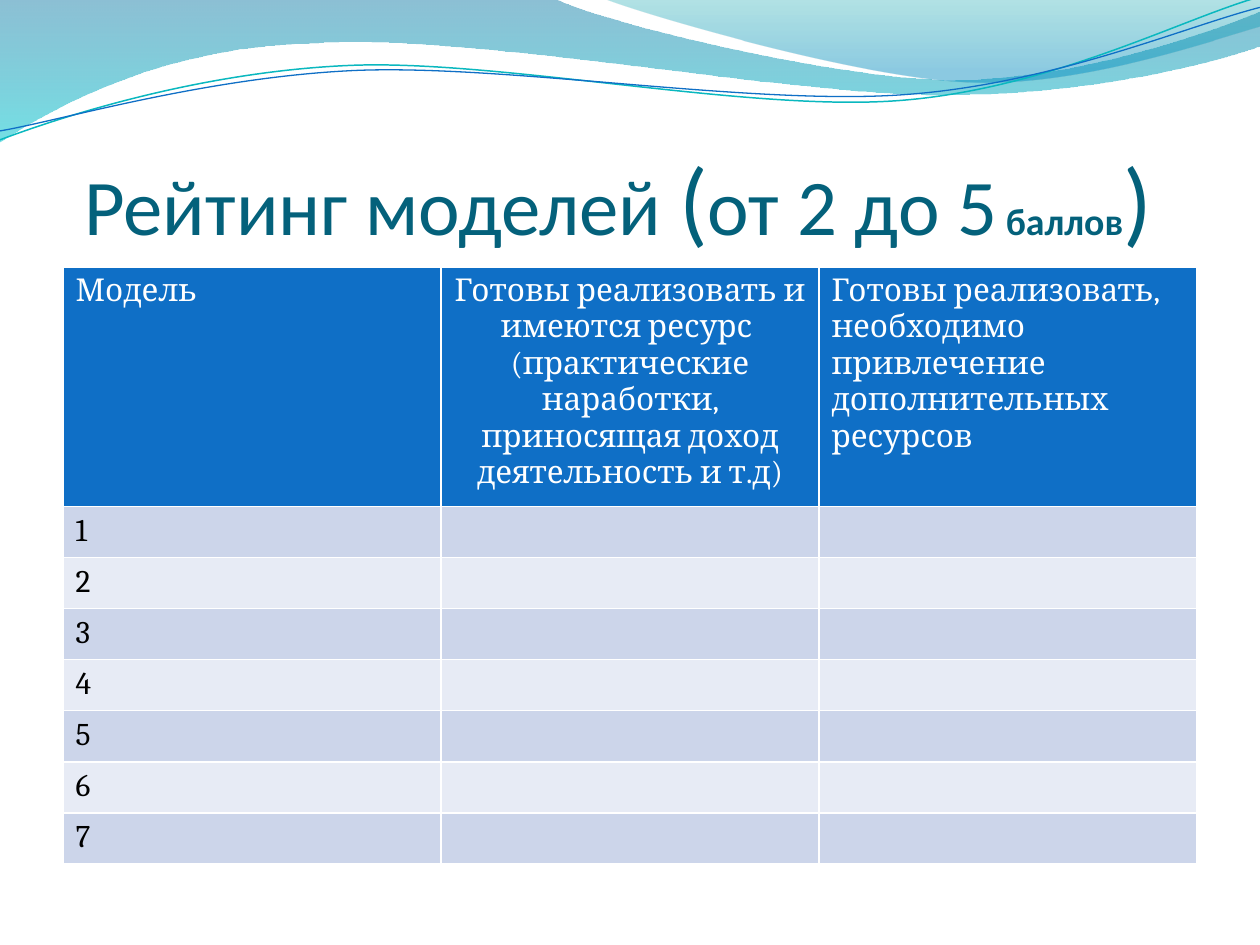
from lxml import etree
from pptx import Presentation
from pptx.dml.color import RGBColor
from pptx.enum.text import MSO_ANCHOR, PP_ALIGN
from pptx.oxml.ns import qn
from pptx.util import Cm, Pt

COLORS = {
    "title": "04617B", "head": "0F6FC6", "odd": "CCD5EA", "even": "E7EBF5",
    "white": "FFFFFF", "black": "000000", "teal": "0AB8BF",
    "sea": "0074A1", "aqua": "00C6CF", "green": "00A1A9", "sky": "008BBF",
}
# Outlines in cm: two numbers are a corner, six are a Bezier curve.
BACK_WAVE = [
    (0, 0), (11.18, -0.03),
    (12.09, 0.43, 16.87, 1.6, 19.25, 1.6),
    (21.67, 1.6, 24.33, 0.66, 25.4, 0.23), (25.43, 0.91),
    (24.97, 1.12, 22.1, 1.93, 18.95, 1.91),
    (15.8, 1.91, 9.7, 0.71, 6.53, 0.86),
    (3.28, 0.91, 1.17, 2.11, -0.03, 2.87),
]
FRONT_WAVE = [
    (12.17, -0.03),
    (12.93, 0.28, 17.32, 1.57, 19.53, 1.65),
    (21.74, 1.75, 24.41, 0.81, 25.4, 0.53), (25.4, 0),
]
TEAL_LINE = [
    (0, 2.82),
    (1.22, 2.36, 4.01, 1.45, 7.04, 1.32),
    (10.03, 1.19, 15.06, 2.26, 18.11, 2.03),
    (21.16, 1.8, 23.83, 0.38, 25.35, -0.05),
]
BLUE_LINE = [
    (0, 2.64),
    (1.19, 2.44, 4.17, 1.55, 7.19, 1.42),
    (10.24, 1.3, 15.16, 2.13, 18.21, 1.91),
    (21.23, 1.7, 23.9, 0.53, 25.4, 0.15),
]
TITLE = [("Рейтинг моделей ", 45, False), ("(", 54, False), ("от 2 до 5", 45, False),
         (" ", 21.6, False), ("баллов", 21.6, True), (")", 54, False)]
HEADERS = [
    ("Модель", PP_ALIGN.LEFT),
    ("Готовы реализовать и имеются ресурс  (практические наработки, "
     "приносящая доход деятельность и т.д)", PP_ALIGN.CENTER),
    ("Готовы реализовать, необходимо привлечение дополнительных ресурсов", PP_ALIGN.LEFT),
]
MODELS = 7


def rgb(name):
    return RGBColor.from_string(COLORS[name])


class Deck:
    """Style and current slide."""
    title_font = "Calibri"
    body_font = "Cambria"
    body_size = 18

    def __init__(self, prs):
        self.slide = prs.slides.add_slide(prs.slide_layouts[6])

    def style_run(self, r, font, size, color, bold=False):
        r.font.name, r.font.size, r.font.bold = font, Pt(size), bold
        r.font.color.rgb = rgb(color)

    def outline(self, outline, closed):
        """Draw all points as corners, then join each curve's three into one Bezier."""
        points = [(Cm(x), Cm(y)) for seg in outline for x, y in zip(seg[::2], seg[1::2])]
        builder = self.slide.shapes.build_freeform(*points[0])
        builder.add_line_segments(points[1:], close=closed)
        sp = builder.convert_to_shape()
        sp.shadow.inherit = False
        corners = iter(list(sp._element.iter(qn("a:lnTo"))))
        for seg in outline[1:]:
            first = next(corners)
            if len(seg) == 6:
                first.tag = qn("a:cubicBezTo")
                for _ in range(2):
                    corner = next(corners)
                    first.append(corner[0])
                    corner.getparent().remove(corner)
        return sp

    def wave(self, outline, stops):
        """Closed shape with a downward fade; stops are (position, colour, opacity %)."""
        sp = self.outline(outline, True)
        sp.line.fill.background()
        sp.fill.gradient()
        sp.fill.gradient_angle = 270
        for stop, (position, color, _) in zip(sp.fill.gradient_stops, stops):
            stop.position = position
            stop.color.rgb = rgb(color)
        for clr, (_, _, opacity) in zip(sp._element.spPr.iter(qn("a:srgbClr")), stops):
            etree.SubElement(clr, qn("a:alpha"), val=str(opacity * 1000))

    def curve(self, outline, color, width):
        sp = self.outline(outline, False)
        sp.fill.background()
        sp.line.color.rgb = rgb(color)
        sp.line.width = Pt(width)

    def title(self, runs, left, top, width, height):
        tf = self.slide.shapes.add_textbox(Cm(left), Cm(top), Cm(width), Cm(height)).text_frame
        tf.word_wrap = True
        tf.vertical_anchor = MSO_ANCHOR.BOTTOM
        tf.margin_left = tf.margin_right = tf.margin_bottom = 0
        for text, size, bold in runs:
            r = tf.paragraphs[0].add_run()
            r.text = text
            self.style_run(r, self.title_font, size, "title", bold)

    def cell(self, cell, text, fill, color, align=PP_ALIGN.LEFT):
        cell.fill.solid()
        cell.fill.fore_color.rgb = rgb(fill)
        if text:
            p = cell.text_frame.paragraphs[0]
            p.text = text
            p.alignment = align
            self.style_run(p.runs[0], self.body_font, self.body_size, color)
        tc_pr = cell._tc.get_or_add_tcPr()
        for i, side in enumerate(("lnL", "lnR", "lnT", "lnB")):
            ln = etree.Element(qn(f"a:{side}"), w=str(Pt(1)))
            solid = etree.SubElement(ln, qn("a:solidFill"))
            etree.SubElement(solid, qn("a:srgbClr"), val=COLORS["white"])
            tc_pr.insert(i, ln)

    def table(self, headers, rows, left, top, width, height, row_height):
        """Rows get a least height; the header grows with its text."""
        frame = self.slide.shapes.add_table(
            rows + 1, len(headers), Cm(left), Cm(top), Cm(width), Cm(height))
        table = frame.table
        for row in table.rows:
            row.height = Cm(row_height)
        frame.height = Cm(height)
        for col, (text, align) in enumerate(headers):
            self.cell(table.cell(0, col), text, "head", "white", align)
            for row in range(1, rows + 1):
                self.cell(table.cell(row, col), "" if col else str(row),
                          "odd" if row % 2 else "even", "black")


def main():
    prs = Presentation()
    prs.slide_width, prs.slide_height = Cm(25.4), Cm(19.05)
    deck = Deck(prs)
    deck.wave(BACK_WAVE, [(0, "sea", 45), (1, "aqua", 55)])
    deck.wave(FRONT_WAVE, [(0, "green", 30), (0.8, "sky", 45)])
    deck.curve(TEAL_LINE, "teal", 0.85)
    deck.curve(BLUE_LINE, "head", 0.75)
    deck.title(TITLE, 1.7, 1.96, 23.01, 3.17)
    deck.table(HEADERS, MODELS, 1.27, 5.38, 22.86, 12.04, 1.03)
    prs.save("out.pptx")


if __name__ == "__main__":
    main()
